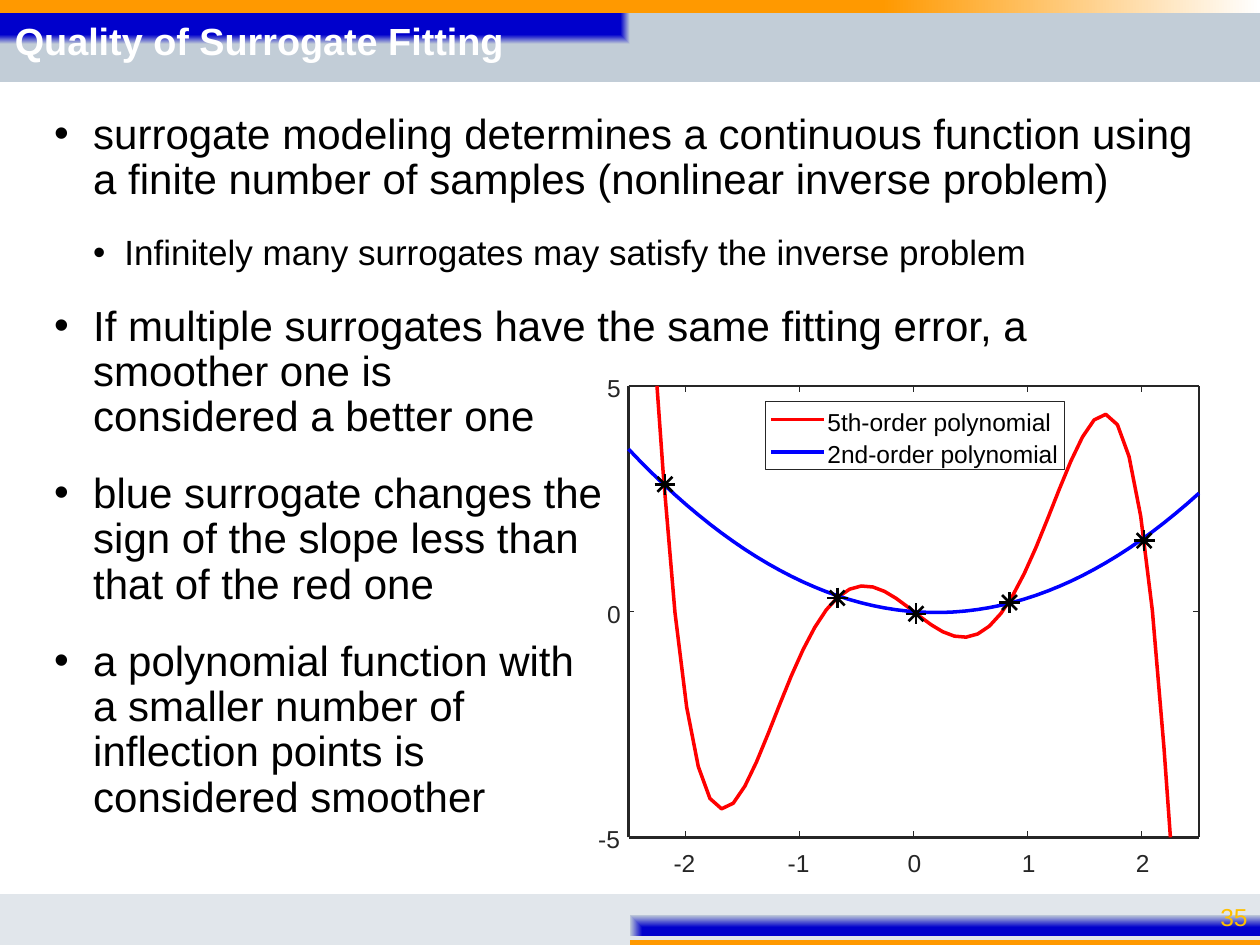
from dataclasses import dataclass
from lxml.etree import SubElement
from pptx import Presentation
from pptx.dml.color import RGBColor
from pptx.enum.shapes import MSO_CONNECTOR, MSO_SHAPE
from pptx.enum.text import MSO_ANCHOR, PP_ALIGN
from pptx.oxml.ns import qn
from pptx.util import Cm, Pt


@dataclass(frozen=True)
class Theme:
    font: str = "Arial"
    white: str = "FFFFFF"
    black: str = "000000"
    orange: str = "FF9900"
    navy: str = "0000CC"
    steel: str = "C2CDD7"
    mist: str = "E1E6EB"
    gold: str = "FFC000"
    axis: str = "262626"
    red: str = "FF0000"
    blue: str = "0000FF"
    title: float = 21.6
    body: float = 24
    sub: float = 20
    small: float = 14


T = Theme()
WIDE, HIGH = 25.4, 19.05
POINTS = [
    (0, "surrogate modeling determines a continuous function using a finite "
        "number of samples (nonlinear inverse problem)"),
    (1, "Infinitely many surrogates may satisfy the inverse problem"),
    (0, "If multiple surrogates have the same fitting error, a smoother one is \n"
        "considered a better one"),
    (0, "blue surrogate changes the \nsign of the slope less than \n"
        "that of the red one"),
    (0, "a polynomial function with \na smaller number of \n"
        "inflection points is \nconsidered smoother"),
]
SAMPLES = [(-2.18, 2.82), (-0.67, 0.3), (0.84, 0.2), (2.02, 1.57), (0.02, -0.05)]


def fifth(x):
    return -0.753 * x * (x * x - 0.604) * (x * x - 4.38)


def second(x):
    return 0.498 * x * x - 0.196 * x


def style(para, size, color, bold=False):
    para.font.name, para.font.size, para.font.bold = T.font, Pt(size), bold
    para.font.color.rgb = RGBColor.from_string(color)


def add_text(shapes, box, text, size, color, bold=False, align=None):
    """Add one middle-anchored line with the default insets."""
    frame = shapes.add_textbox(*map(Cm, box)).text_frame
    frame.word_wrap, frame.vertical_anchor = True, MSO_ANCHOR.MIDDLE
    para = frame.paragraphs[0]
    para.text, para.alignment = text, align
    style(para, size, color, bold)
    return para


def add_label(shapes, left, top, text, color=T.axis):
    """Add a small unwrapped label without insets."""
    wide = 0.35 + 0.18 * len(text) if len(text) < 3 else 5.1
    frame = shapes.add_textbox(Cm(left), Cm(top), Cm(wide), Cm(0.68)).text_frame
    frame.margin_left = frame.margin_top = 0
    frame.margin_right = frame.margin_bottom = 0
    frame.word_wrap = False
    frame.paragraphs[0].text = text
    style(frame.paragraphs[0], T.small, color)


def add_rect(shapes, box, fill=None, line=None):
    rect = shapes.add_shape(MSO_SHAPE.RECTANGLE, *map(Cm, box))
    rect.shadow.inherit = False
    for part, color in ((rect.fill, fill), (rect.line.fill, line)):
        if color:
            part.solid()
            part.fore_color.rgb = RGBColor.from_string(color)
        else:
            part.background()
    if line:
        rect.line.width = Pt(0.5)
    return rect


def add_bar(shapes, box, stops, focus=None):
    """Add a gradient bar, linear or spreading from the focus corner."""
    bar = add_rect(shapes, box)
    props = bar.element.spPr
    grad = SubElement(props, qn("a:gradFill"), rotWithShape="1")
    props.replace(props.find(qn("a:noFill")), grad)
    listing = SubElement(grad, qn("a:gsLst"))
    for place, color in stops:
        stop = SubElement(listing, qn("a:gs"), pos=str(place * 1000))
        SubElement(stop, qn("a:srgbClr"), val=color)
    if focus:
        way = SubElement(grad, qn("a:path"), path="rect")
        SubElement(way, qn("a:fillToRect"), {side: "100000" for side in focus})
    else:
        SubElement(grad, qn("a:lin"), ang="0", scaled="1")


def add_line(shapes, start, end, color, width):
    line = shapes.add_connector(MSO_CONNECTOR.STRAIGHT, *map(Cm, start + end))
    line.line.color.rgb = RGBColor.from_string(color)
    line.line.width = Pt(width)
    SubElement(line.element.spPr, qn("a:effectLst"))


def add_path(shapes, strokes, color, width):
    """Add one open outline made of one or more strokes."""
    strokes = [[(Cm(x), Cm(y)) for x, y in stroke] for stroke in strokes]
    pen = shapes.build_freeform(*strokes[0][0])
    for stroke in strokes:
        if stroke is not strokes[0]:
            pen.move_to(*stroke[0])
        pen.add_line_segments(stroke[1:], close=False)
    shape = pen.convert_to_shape()
    shape.shadow.inherit = False
    shape.fill.background()
    shape.line.color.rgb = RGBColor.from_string(color)
    shape.line.width = Pt(width)


def add_frame(shapes):
    """Add the coloured bars at the top and the bottom, and the page number."""
    add_bar(shapes, (0, 0.13, WIDE, 1.52),
            [(25, T.navy), (75, T.navy), (100, T.steel)], "rb")
    add_bar(shapes, (0, 0, WIDE, 0.26),
            [(46, T.orange), (70, T.orange), (100, T.white), (100, T.mist)])
    add_bar(shapes, (0, 18.85, WIDE, 0.2),
            [(50, T.orange), (93, T.orange), (100, T.white), (100, T.mist)], "lt")
    add_bar(shapes, (0, 18.03, WIDE, 0.83),
            [(40, T.navy), (100, T.steel), (100, T.mist)], "lt")
    add_text(shapes, (23.47, 18.11, 1.93, 0.74), "35", T.small, T.gold,
             align=PP_ALIGN.RIGHT)


def add_points(shapes, box):
    frame = shapes.add_textbox(*map(Cm, box)).text_frame
    frame.word_wrap = True
    for i, (level, text) in enumerate(POINTS):
        para = frame.add_paragraph() if i else frame.paragraphs[0]
        para.text, para.level = text, level
        para.line_spacing, para.space_before = 0.9, Pt(18)
        style(para, T.sub if level else T.body, T.black)
        props = para._p.get_or_add_pPr()
        left, hang = (1.42, 0.63) if level else (0.79, 0.79)
        props.set("marL", str(Cm(left)))
        props.set("indent", str(-Cm(hang)))
        SubElement(props, qn("a:buFont"), typeface=T.font)
        SubElement(props, qn("a:buChar"), char="•")
        props.append(props.find(qn("a:defRPr")))


def add_legend(shapes, left, top):
    box = (left, top, 6.02, 1.37)
    add_rect(shapes, box, T.white)
    for i, (text, color) in enumerate((("5th-order polynomial", T.red),
                                       ("2nd-order polynomial", T.blue))):
        y = top + 0.36 + 0.65 * i
        add_label(shapes, left + 1.24, y - 0.26, text, T.black)
        add_line(shapes, (left + 0.1, y), (left + 1.17, y), color, 2)
    add_rect(shapes, box, line=T.axis)


def add_plot(shapes, box):
    """Plot both curves and the samples over x ±2.5 and y ±5."""
    left, top, wide, high = box
    right, low = left + wide, top + high

    def spot(x, y):
        return left + wide * (x + 2.5) / 5, low - high * (y + 5) / 10

    add_rect(shapes, box, T.white)
    for y in (low, top):
        add_line(shapes, (left, y), (right, y), T.axis, 1.5)
    for x in (left, right):
        add_line(shapes, (x, low), (x, top), T.axis, 1.5)
    for tick in range(-2, 3):
        x, text = spot(tick, 0)[0], str(tick)
        for y, step in ((low, -0.12), (top, 0.12)):
            add_line(shapes, (x, y), (x, y + step), T.axis, 0.5)
        add_label(shapes, x - 0.12 * len(text), low + 0.21, text)
    for tick in (-5, 0, 5):
        y, text = spot(0, tick)[1], str(tick)
        for x, step in ((left, 0.12), (right, -0.12)):
            add_line(shapes, (x, y), (x + step, y), T.axis, 0.5)
        add_label(shapes, left - 0.25 - 0.18 * len(text), y - 0.26, text)

    grid = [-2.5 + 5 * i / 49 for i in range(50)]
    inner = [(x, fifth(x)) for x in grid if abs(fifth(x)) < 5]
    steep = [(-2.25, 5), *inner, (2.25, -5)]
    flat = [(x, second(x)) for x in grid]
    for curve, color in ((steep, T.red), (flat, T.blue)):
        add_path(shapes, [[spot(*point) for point in curve]], color, 2)
    add_legend(shapes, left + 2.77, top + 0.32)
    for sample in SAMPLES:
        x, y = spot(*sample)
        arms = ((0, 0.21), (0.21, 0), (0.15, 0.15), (0.15, -0.15))
        add_path(shapes, [[(x - a, y - b), (x + a, y + b)] for a, b in arms],
                 T.black, 1.5)


def main():
    deck = Presentation()
    deck.slide_width, deck.slide_height = Cm(WIDE), Cm(HIGH)
    shapes = deck.slides.add_slide(deck.slide_layouts[6]).shapes
    add_frame(shapes)
    add_points(shapes, (0.84, 2.16, 23.7, 15.62))
    add_plot(shapes.add_group_shape().shapes, (12.67, 7.78, 11.5, 9.1))
    title = add_text(shapes, (0.05, 0.28, 25.35, 1.17),
                     "Quality of Surrogate Fitting", T.title, T.white, bold=True)
    title.line_spacing = 0.9
    deck.save("out.pptx")


if __name__ == "__main__":
    main()
